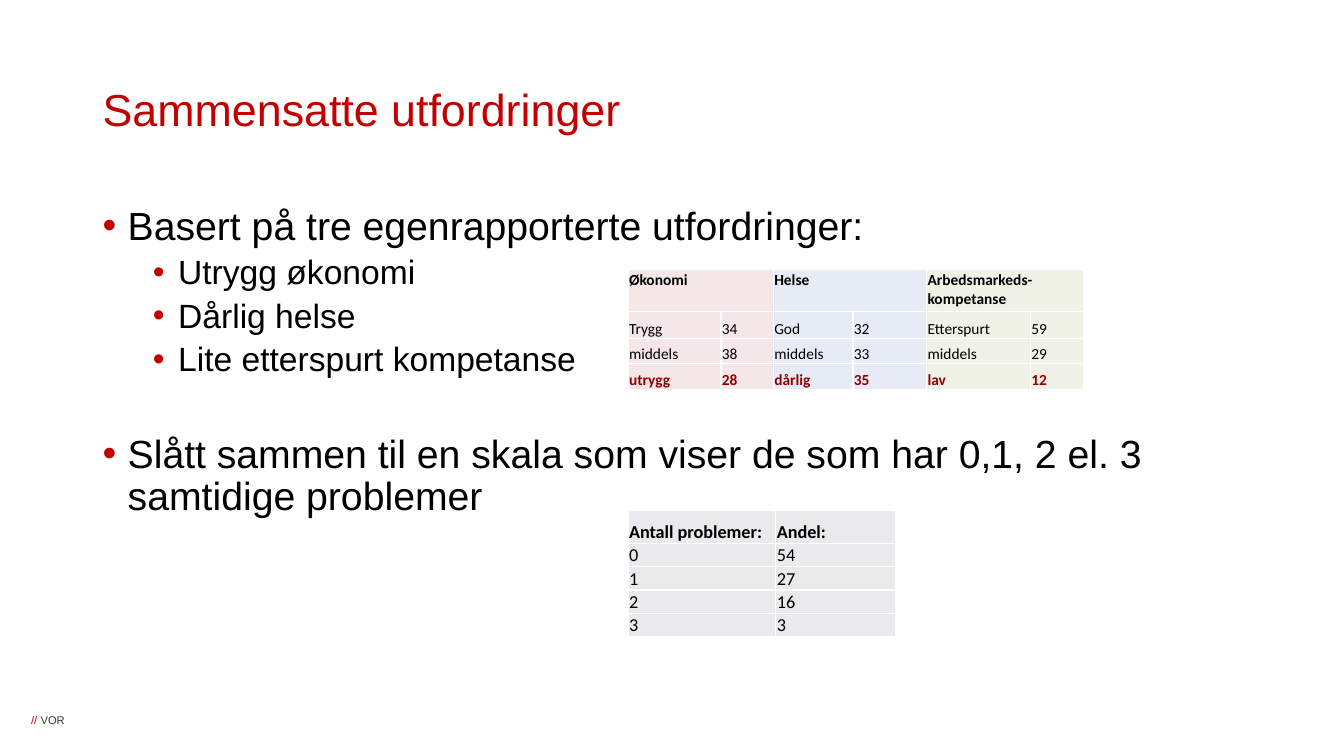
from lxml.etree import SubElement
from pptx import Presentation
from pptx.dml.color import RGBColor
from pptx.enum.text import MSO_ANCHOR
from pptx.oxml.ns import qn
from pptx.util import Pt

# Content
TITLE = "Sammensatte utfordringer"
# level, text, space before
POINTS = [
    (0, "Basert på tre egenrapporterte utfordringer:", 0),
    (1, "Utrygg økonomi", 5),
    (1, "Dårlig helse", 5),
    (1, "Lite etterspurt kompetanse", 5),
    (0, "Slått sammen til en skala som viser de som har 0,1, 2 el. 3 "
        "samtidige problemer", 40),
]
# heading, fill, rows
CHALLENGES = [
    ("Økonomi", "F5E7E7", [("Trygg", 34), ("middels", 38), ("utrygg", 28)]),
    ("Helse", "E7EBF5", [("God", 32), ("middels", 33), ("dårlig", 35)]),
    ("Arbedsmarkeds-kompetanse", "F0F1E7",
     [("Etterspurt", 59), ("middels", 29), ("lav", 12)]),
]
PROBLEM_COUNTS = [("Antall problemer:", "Andel:"),
                  (0, 54), (1, 27), (2, 16), (3, 3)]
FOOTER = [("// ", "C30000"), ("VOR", "3E3832")]

RED, DARK_RED, BLACK, WHITE = "C30000", "920000", "000000", "FFFFFF"
COUNT_FILL = "EAE9ED"
TABLE_LEFT = 448.6
LEVEL_SIZES = [28, 24]
INDENT = 18


def color(value):
    return RGBColor.from_string(value)


def style(font, size, ink, name="Arial", bold=False):
    font.size, font.name, font.bold = Pt(size), name, bold
    font.color.rgb = color(ink)


def add_text(left, top, width, height, wrap=True):
    frame = slide.shapes.add_textbox(
        Pt(left), Pt(top), Pt(width), Pt(height)).text_frame
    frame.word_wrap = wrap
    return frame


def add_bullet(paragraph, level):
    props = paragraph._p.get_or_add_pPr()
    props.set("marL", str(Pt(INDENT * (1 + 2 * level))))
    props.set("indent", str(-Pt(INDENT)))
    SubElement(SubElement(props, qn("a:buClr")), qn("a:srgbClr"), val=RED)
    SubElement(props, qn("a:buFont"), typeface="Arial")
    SubElement(props, qn("a:buChar"), char="•")


def add_grid(top, widths, heights):
    grid = slide.shapes.add_table(
        len(heights), len(widths), Pt(TABLE_LEFT), Pt(top),
        Pt(sum(widths)), Pt(sum(heights))).table
    for column, width in zip(grid.columns, widths):
        column.width = Pt(width)
    for row, height in zip(grid.rows, heights):
        row.height = Pt(height)
    return grid


def fill_cell(cell, text, fill, size, ink=BLACK, bold=False,
              anchor=MSO_ANCHOR.BOTTOM):
    cell.margin_left = cell.margin_right = cell.margin_top = Pt(0.7)
    cell.margin_bottom = 0
    cell.vertical_anchor = anchor
    props = cell._tc.get_or_add_tcPr()
    for side in ("lnL", "lnR", "lnT", "lnB"):
        line = SubElement(props, qn(f"a:{side}"), w=str(Pt(1)))
        SubElement(SubElement(line, qn("a:solidFill")),
                   qn("a:srgbClr"), val=WHITE)
    cell.fill.solid()
    cell.fill.fore_color.rgb = color(fill)
    paragraph = cell.text_frame.paragraphs[0]
    paragraph.text = str(text)
    style(paragraph.font, size, ink, "Calibri", bold)


presentation = Presentation()
presentation.slide_width, presentation.slide_height = Pt(960), Pt(540)
slide = presentation.slides.add_slide(presentation.slide_layouts[6])

# Footer
footer = add_text(19.4, 509.8, 28, 9.4, wrap=False)
footer.margin_left = Pt(2.9)
footer.margin_right = footer.margin_top = footer.margin_bottom = 0
for text, ink in FOOTER:
    run = footer.paragraphs[0].add_run()
    run.text = text
    style(run.font, 8, ink)

# Title
title = add_text(66.2, 38.2, 828, 84.2)
title.vertical_anchor = MSO_ANCHOR.MIDDLE
heading = title.paragraphs[0]
heading.text = TITLE
heading.line_spacing = 0.9
style(heading.font, 32, RED)

# Bullet points
body = add_text(66.2, 144, 828, 342.7)
for index, (level, text, space) in enumerate(POINTS):
    point = body.add_paragraph() if index else body.paragraphs[0]
    point.text = text
    point.level = level
    add_bullet(point, level)
    point.line_spacing = 0.9
    point.space_before = Pt(space)
    style(point.font, LEVEL_SIZES[level], BLACK)

# Challenges: a pair of columns for each, worst answer in red
challenges = add_grid(192.5, [66.4, 37.4, 56.9, 52.6, 74.2, 38.2],
                      [30, 19.3, 18, 18.7])
for group, (name, fill, answers) in enumerate(CHALLENGES):
    for row, pair in enumerate([(name, ""), *answers]):
        worst = row == len(answers)
        for side, text in enumerate(pair):
            fill_cell(challenges.cell(row, 2 * group + side), text, fill, 11,
                      DARK_RED if worst else BLACK, worst or row == 0,
                      MSO_ANCHOR.BOTTOM if row else MSO_ANCHOR.TOP)
    challenges.cell(0, 2 * group).merge(challenges.cell(0, 2 * group + 1))

# Number of simultaneous problems
counts = add_grid(364.3, [105.6, 85.4], [23.8] + [16.7] * 4)
for row, pair in enumerate(PROBLEM_COUNTS):
    for column, text in enumerate(pair):
        fill_cell(counts.cell(row, column), text, COUNT_FILL, 13,
                  bold=row == 0)

presentation.save("out.pptx")
